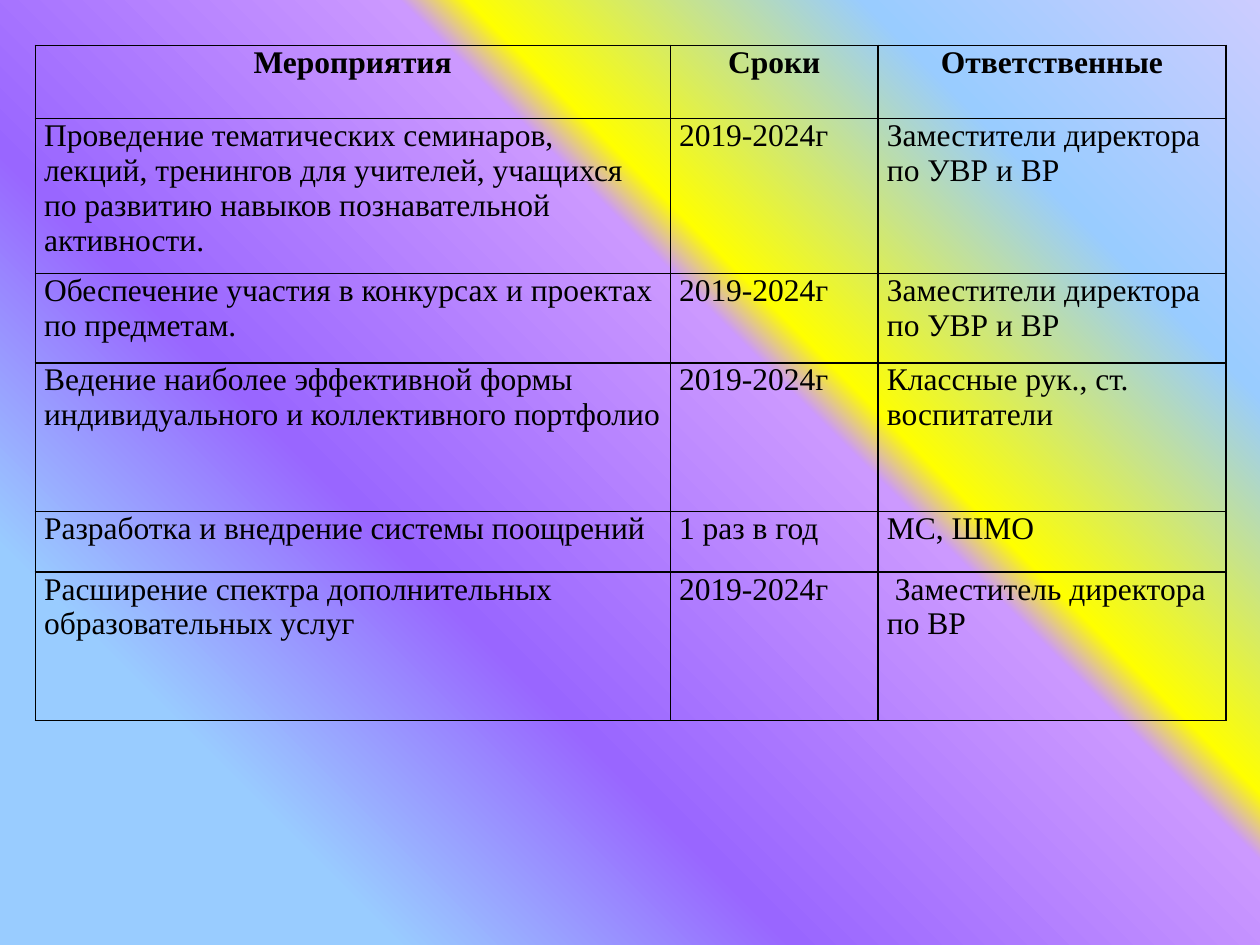
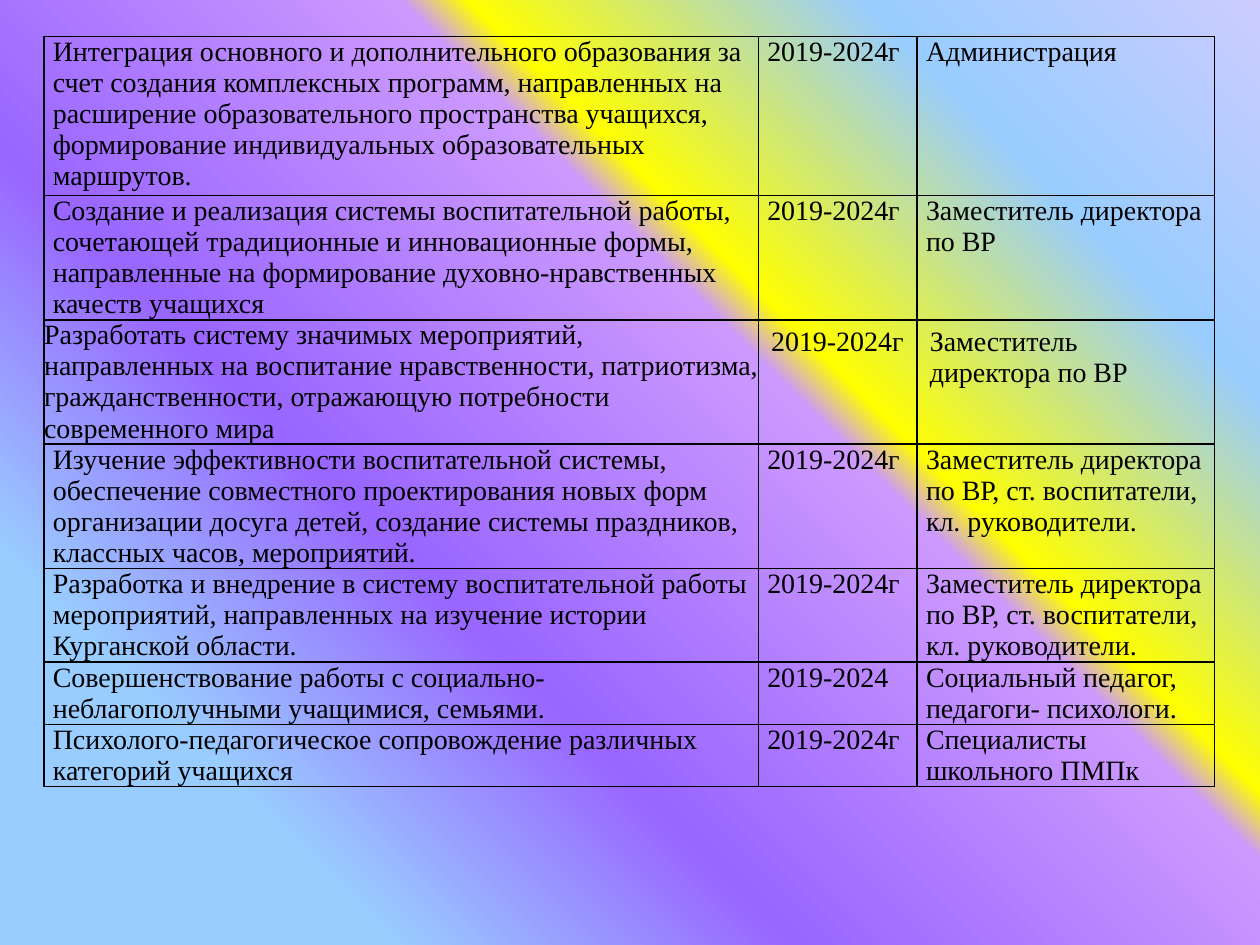
"""Build two slides that hold a school's plan of events as tables."""
from lxml.etree import SubElement as Sub
from pptx import Presentation
from pptx.dml.color import RGBColor as Rgb
from pptx.enum.text import PP_ALIGN as Align
from pptx.oxml import parse_xml
from pptx.oxml.ns import nsdecls, qn
from pptx.util import Inches, Pt

HUES = {"sky": "99CCFF", "violet": "9966FF", "pink": "CC99FF",
        "yellow": "FFFF00", "pale": "CCCCFF", "ink": "000000"}
STOPS = [(18, "sky"), (36, "violet"), (61, "pink"),
         (64, "yellow"), (82, "sky"), (100, "pale")]
FONT = "Times New Roman"
PAD = (0.07, 0)
TERM = "2019-2024г"
HEADS = "Заместители директора по УВР и ВР"
HEAD = "Заместитель директора по ВР"
TEAM = HEAD + ", ст. воспитатели, кл. руководители."

GOALS = [
    (0.58, "Мероприятия", "Сроки", "Ответственные"),
    (1.23, "Проведение тематических семинаров, лекций, тренингов для учителей, "
           "учащихся по развитию навыков познавательной активности.", TERM, HEADS),
    (0.71, "Обеспечение участия в конкурсах и проектах по предметам.", TERM, HEADS),
    (1.18, "Ведение наиболее эффективной формы индивидуального и коллективного "
           "портфолио", TERM, "Классные рук., ст. воспитатели"),
    (0.48, "Разработка и внедрение системы поощрений", "1 раз в год", "МС, ШМО"),
    (1.18, "Расширение спектра дополнительных образовательных услуг", TERM, " " + HEAD),
]
TASKS = [
    (1.26, "Интеграция основного и дополнительного образования за счет создания "
           "комплексных программ, направленных на расширение образовательного "
           "пространства учащихся, формирование индивидуальных образовательных "
           "маршрутов.", TERM, "Администрация"),
    (0.78, "Создание и реализация системы воспитательной работы, сочетающей "
           "традиционные и инновационные формы, направленные на формирование "
           "духовно-нравственных качеств учащихся", TERM, HEAD),
    (0.78, "Разработать систему значимых мероприятий, направленных на воспитание "
           "нравственности, патриотизма, гражданственности, отражающую потребности "
           "современного мира", TERM, HEAD),
    (0.94, "Изучение эффективности воспитательной системы, обеспечение совместного "
           "проектирования новых форм организации досуга детей, создание системы "
           "праздников, классных часов, мероприятий.", TERM, TEAM),
    (0.63, "Разработка и внедрение в систему воспитательной работы мероприятий, "
           "направленных на изучение истории Курганской области.", TERM, TEAM),
    (0.32, "Совершенствование работы с социально-неблагополучными учащимися, "
           "семьями.", "2019-2024", "Социальный педагог, педагоги- психологи."),
    (0.47, "Психолого-педагогическое сопровождение различных категорий учащихся",
     TERM, "Специалисты школьного ПМПк"),
]


class Deck:
    """Hold the style and the current slide."""

    def __init__(self):
        self.prs = Presentation()
        self.prs.slide_width, self.prs.slide_height = Inches(10), Inches(7.5)
        self.slide = None

    def page(self):
        """Add a blank slide with the rainbow ground."""
        self.slide = self.prs.slides.add_slide(self.prs.slide_layouts[6])
        fill = self.slide.background.fill
        fill.gradient()
        fill.gradient_angle = 45
        stops = next(self.slide.element.iter(qn("a:gsLst")))
        for old in list(stops):
            stops.remove(old)
        for place, hue in STOPS:
            stop = Sub(stops, qn("a:gs"), pos=str(place * 1000))
            Sub(stop, qn("a:srgbClr"), val=HUES[hue])

    def frame(self, cell):
        """Draw a thin line on all four sides of a cell."""
        for spot, side in enumerate("LRTB"):
            line = parse_xml(
                f'<a:ln{side} {nsdecls("a")} w="{Pt(1)}"><a:solidFill>'
                f'<a:srgbClr val="{HUES["ink"]}"/></a:solidFill></a:ln{side}>')
            cell._tc.get_or_add_tcPr().insert(spot, line)

    def label(self, cell, text, size, bold, pad):
        """Fill one cell with styled text."""
        cell.fill.background()
        self.frame(cell)
        cell.margin_left = cell.margin_right = Inches(pad[0])
        cell.margin_top = cell.margin_bottom = Inches(pad[1])
        cell.text_frame.text = text
        para = cell.text_frame.paragraphs[0]
        para.alignment = Align.CENTER if bold else Align.LEFT
        font = para.runs[0].font
        font.name, font.size, font.bold = FONT, Pt(size), bold
        font.color.rgb = Rgb.from_string(HUES["ink"])

    def table(self, left, top, widths, rows, size, head=False, pads=None):
        """Add a table; each row is a height and its texts."""
        tall = sum(row[0] for row in rows)
        grid = self.slide.shapes.add_table(
            len(rows), len(widths), Inches(left), Inches(top),
            Inches(sum(widths)), Inches(tall)).table
        grid.first_row, grid.horz_banding = head, False
        for col, width in zip(grid.columns, widths):
            col.width = Inches(width)
        for r, (height, *texts) in enumerate(rows):
            grid.rows[r].height = Inches(height)
            for c, text in enumerate(texts):
                pad = (pads or {}).get((r, c), PAD)
                self.label(grid.cell(r, c), text, size, head and r == 0, pad)


def main():
    """Build and save the deck."""
    deck = Deck()
    deck.page()
    deck.table(0.28, 0.36, (5.04, 1.65, 2.76), GOALS, 18, head=True)
    deck.page()
    deck.table(0.35, 0.29, (5.67, 1.26, 2.36), TASKS, 16,
               pads={(2, 0): (0, 0), (2, 1): (0.1, 0.05), (2, 2): (0.1, 0.05)})
    deck.prs.save("out.pptx")


if __name__ == "__main__":
    main()
